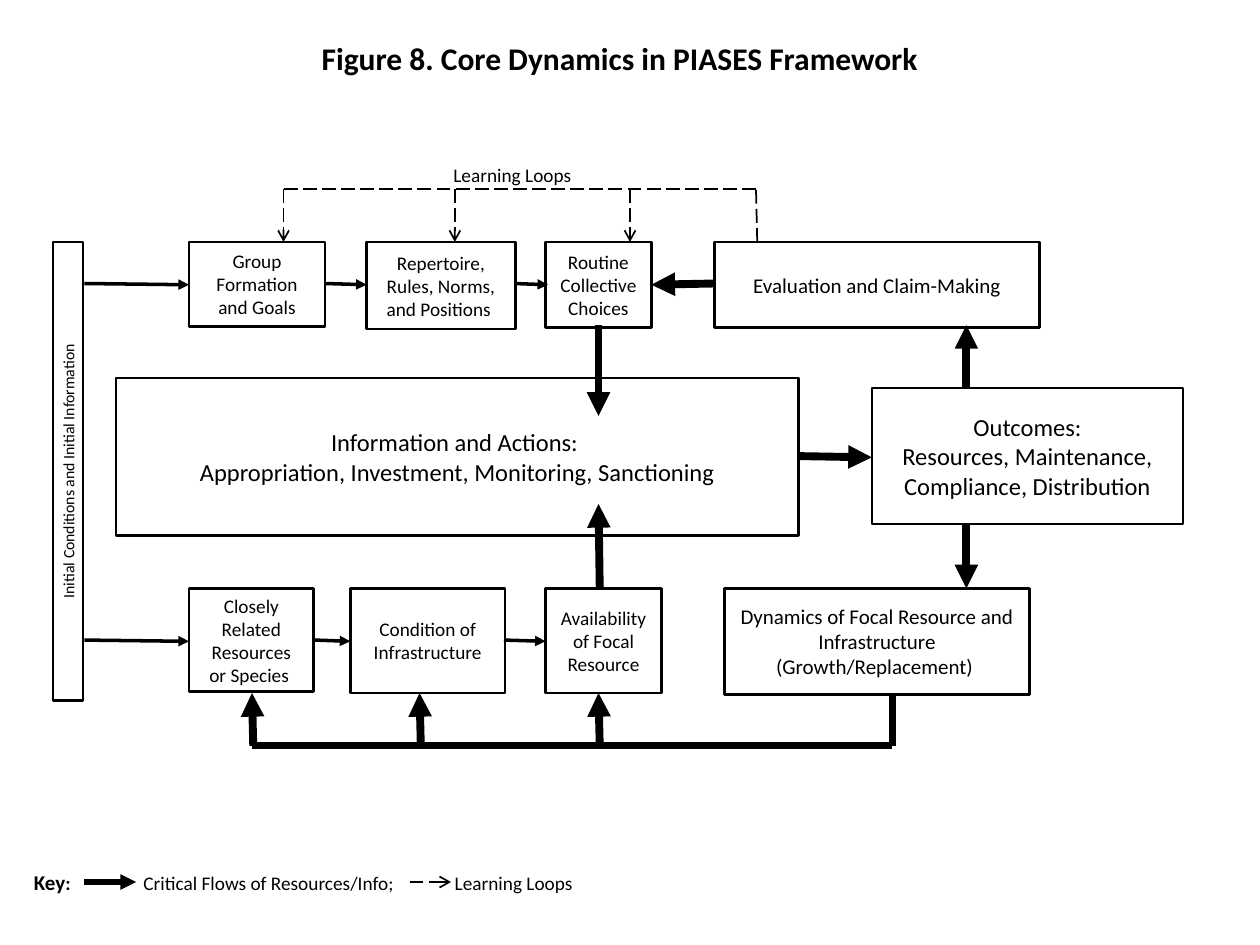
import pptx
import pptx.dml.color
import pptx.enum.dml
import pptx.enum.shapes
import pptx.enum.text
import pptx.oxml
import pptx.oxml.ns
import pptx.util
from pptx.util import Inches

BLACK = "000000"
WHITE = "FFFFFF"
CENTER = pptx.enum.text.PP_ALIGN.CENTER
LEFT = pptx.enum.text.PP_ALIGN.LEFT
MIDDLE = pptx.enum.text.MSO_ANCHOR.MIDDLE


def colour(value):
    return pptx.dml.color.RGBColor.from_string(value)


def add_element(parent, tag, **attributes):
    element = pptx.oxml.parse_xml(f"<a:{tag} {pptx.oxml.ns.nsdecls('a')}/>")
    for name, value in attributes.items():
        element.set(name, str(value))
    parent.append(element)
    return element


def write(paragraph, text, size=11, bold=False, align=LEFT):
    paragraph.alignment = align
    span = paragraph.add_run()
    span.text = text
    span.font.name = "Calibri"
    span.font.size = pptx.util.Pt(size)
    span.font.bold = bold
    span.font.color.rgb = colour(BLACK)


class Diagram:
    def __init__(self, deck):
        self.page = deck.slides.add_slide(deck.slide_layouts[6])

    def frame(self, left, top, width, height, line=BLACK):
        box = self.page.shapes.add_shape(
            pptx.enum.shapes.MSO_SHAPE.RECTANGLE,
            Inches(left), Inches(top), Inches(width), Inches(height))
        box.shadow.inherit = False
        box.fill.background()
        box.line.color.rgb = colour(line)
        box.line.width = pptx.util.Pt(1.5)
        box.text_frame.word_wrap = True
        box.text_frame.vertical_anchor = MIDDLE
        return box

    def box(self, left, top, width, height, *lines, size=11, bold=False, line=BLACK):
        box = self.frame(left, top, width, height, line)
        for index, text in enumerate(lines):
            frame = box.text_frame
            para = frame.add_paragraph() if index else frame.paragraphs[0]
            write(para, text, size=size, bold=bold, align=CENTER)
        return box

    def upright_box(self, left, top, width, height, text, size):
        box = self.box(left, top, width, height, text, size=size)
        box.text_frame._txBody.bodyPr.set("vert", "vert270")

    def label(self, left, top, width, height, text):
        box = self.page.shapes.add_textbox(
            Inches(left), Inches(top), Inches(width), Inches(height))
        box.text_frame.word_wrap = True
        write(box.text_frame.paragraphs[0], text)

    def key(self, left, top, width, height, heading, entries):
        box = self.frame(left, top, width, height, line=WHITE)
        para = box.text_frame.paragraphs[0]
        write(para, heading, size=12, bold=True)
        write(para, ":", bold=True)
        stops = add_element(para._p.get_or_add_pPr(), "tabLst")
        for text, position in entries:
            add_element(stops, "tab", pos=Inches(position), algn="l")
            write(para, "\t" + text)

    def line(self, x1, y1, x2, y2, width=4.5, head="triangle", dashed=False):
        line = self.page.shapes.add_connector(
            pptx.enum.shapes.MSO_CONNECTOR.STRAIGHT,
            Inches(x1), Inches(y1), Inches(x2), Inches(y2))
        line.line.color.rgb = colour(BLACK)
        line.line.width = pptx.util.Pt(width)
        if dashed:
            line.line.dash_style = pptx.enum.dml.MSO_LINE.LONG_DASH
        if head:
            add_element(line.line._get_or_add_ln(), "tailEnd", type=head)
        add_element(line._element.spPr, "effectLst")

    def dashed_line(self, x1, y1, x2, y2, head=None):
        self.line(x1, y1, x2, y2, width=1, head=head, dashed=True)


def main():
    deck = pptx.Presentation()
    deck.slide_width = Inches(10)
    deck.slide_height = Inches(7.5)
    diagram = Diagram(deck)

    diagram.box(0.42, 0.25, 9, 0.42, "Figure 8. Core Dynamics in PIASES Framework",
                size=18, bold=True, line=WHITE)

    upper, lower = 1.92, 4.67
    for left, top, width, height, text, size in [
        (5.67, upper, 2.58, 0.68, "Evaluation and Claim-Making", 12),
        (4.33, upper, 0.84, 0.68, "Routine Collective Choices", 11),
        (2.91, upper, 1.18, 0.69, "Repertoire, Rules, Norms, and Positions ", 11),
        (1.5, upper, 1.08, 0.67, "Group Formation and Goals", 11),
        (1.5, lower, 0.99, 0.82, "Closely Related Resources or Species ", 11),
        (2.78, lower, 1.23, 0.83, "Condition of Infrastructure", 11),
        (4.33, lower, 0.92, 0.83, "Availability of Focal Resource", 11),
        (5.75, lower, 2.42, 0.84,
         "Dynamics of Focal Resource and Infrastructure (Growth/Replacement) ", 12),
    ]:
        diagram.box(left, top, width, height, text, size=size)
    diagram.box(6.92, 3.08, 2.47, 1.08, "Outcomes:",
                "Resources, Maintenance, Compliance, Distribution", size=14)
    diagram.box(0.92, 3, 5.42, 1.25, "Information and Actions: ",
                "Appropriation, Investment, Monitoring, Sanctioning", size=14)
    diagram.upright_box(0.42, upper, 0.24, 3.64,
                        "Initial Conditions and Initial Information", size=9)

    for flow in [
        (6.33, 3.62, 6.92, 3.63),
        (7.67, 3.08, 7.67, 2.58),
        (7.67, 4.17, 7.67, lower),
        (5.67, 2.25, 5.17, 2.26),
        (4.75, 2.58, 4.75, 3.3),
        (4.76, lower, 4.75, 4),
    ]:
        diagram.line(*flow)

    upper_steps = [(0.67, 1.5), (2.58, 2.91), (4.08, 4.35)]
    lower_steps = [(0.67, 1.5), (2.5, 2.78), (4, 4.33)]
    for y, steps in [(2.25, upper_steps), (5.08, lower_steps)]:
        for start, end in steps:
            diagram.line(start, y, end, y + 0.01, width=2)

    diagram.dashed_line(6.01, upper, 6, 1.5)
    diagram.dashed_line(6, 1.5, 2.25, 1.5)
    for x in (2.25, 3.61, 5):
        diagram.dashed_line(x, 1.5, x, upper, head="arrow")
    diagram.label(3.5, 1.25, 1.25, 0.29, "Learning Loops")

    feedback = 5.92
    diagram.line(7.08, feedback, 2, feedback, width=4, head=None)
    diagram.line(7.08, feedback, 7.08, 5.5, width=4, head=None)
    for x in (2, 3.33, 4.75):
        diagram.line(x + 0.01, feedback, x, 5.5)

    diagram.key(0.17, 6.75, 9.25, 0.5, "Key",
                [("Critical Flows of Resources/Info;", 0.87), ("Learning Loops", 3.34)])
    diagram.line(0.67, 7, 1.08, 7, width=3)
    diagram.dashed_line(3.25, 7, 3.58, 7, head="arrow")

    deck.save("out.pptx")


if __name__ == "__main__":
    main()
